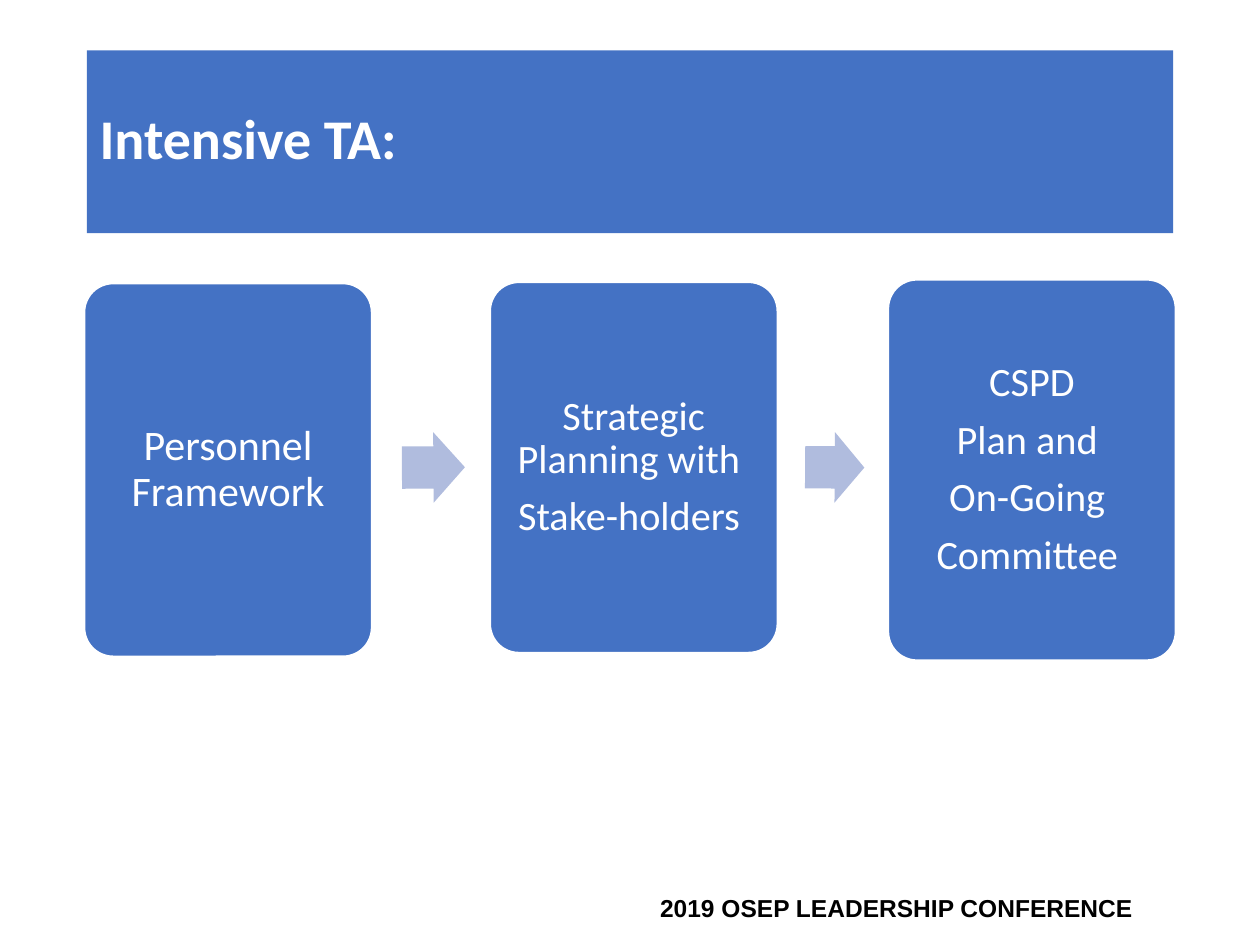
from dataclasses import dataclass

from pptx import Presentation
from pptx.dml.color import RGBColor
from pptx.enum import shapes, text
from pptx.util import Inches, Pt

BLUE = RGBColor(0x44, 0x72, 0xC4)
PALE_BLUE = RGBColor(0xB0, 0xBC, 0xDE)
WHITE = RGBColor(0xFF, 0xFF, 0xFF)
BLACK = RGBColor(0x00, 0x00, 0x00)

STEP_WIDTH = 2.28
ARROW_TOP, ARROW_HEIGHT = 3.43, 0.56


@dataclass
class Step:
    left: float
    top: float
    height: float
    size: int
    lines: list[str]


@dataclass
class Arrow:
    left: float
    width: float
    rotation: float


STEPS = [
    Step(0.67, 2.25, 2.96, 24, ["Personnel Framework"]),
    Step(3.89, 2.24, 2.94, 23, ["Strategic Planning with ", "Stake-holders "]),
    Step(7.05, 2.22, 3.02, 23, ["CSPD", "Plan and ", "On-Going ", "Committee "]),
]
ARROWS = [Arrow(3.19, 0.5, 359.6), Arrow(6.39, 0.47, 0.4)]


def place(sp, left: float, top: float, width: float, height: float) -> None:
    sp.left, sp.top = Inches(left), Inches(top)
    sp.width, sp.height = Inches(width), Inches(height)


def format_text(tf, font: str, size: int, color: RGBColor, bold: bool, align) -> None:
    for p in tf.paragraphs:
        p.alignment = align
        for r in p.runs:
            r.font.name = font
            r.font.size = Pt(size)
            r.font.bold = bold
            r.font.color.rgb = color


def fill_shape(sp, color: RGBColor) -> None:
    sp.fill.solid()
    sp.fill.fore_color.rgb = color


def draw_title(s) -> None:
    sp = s.shapes.title
    place(sp, 0.69, 0.4, 8.62, 1.45)
    fill_shape(sp, BLUE)
    tf = sp.text_frame
    tf.text = "Intensive TA:"
    tf.vertical_anchor = text.MSO_ANCHOR.MIDDLE
    tf.paragraphs[0].line_spacing = 0.9
    format_text(tf, "Calibri", 32, WHITE, True, text.PP_ALIGN.LEFT)


def draw_step(s, step: Step) -> None:
    sp = s.shapes.add_shape(
        shapes.MSO_SHAPE.ROUNDED_RECTANGLE, Inches(step.left), Inches(step.top),
        Inches(STEP_WIDTH), Inches(step.height))
    sp.adjustments[0] = 0.1
    sp.shadow.inherit = False
    fill_shape(sp, BLUE)
    sp.line.color.rgb = WHITE
    sp.line.width = Pt(1)
    tf = sp.text_frame
    tf.word_wrap = True
    tf.vertical_anchor = text.MSO_ANCHOR.MIDDLE
    tf.margin_left = tf.margin_right = Inches(0.1)
    tf.margin_top = tf.margin_bottom = Inches(0.1)
    tf.text = "\n".join(step.lines)
    for p in tf.paragraphs:
        p.line_spacing = 0.9
        p.space_after = Pt(round(step.size * 0.35, 1))
    format_text(tf, "Calibri", step.size, WHITE, False, text.PP_ALIGN.CENTER)


def draw_arrow(s, arrow: Arrow) -> None:
    sp = s.shapes.add_shape(
        shapes.MSO_SHAPE.RIGHT_ARROW, Inches(arrow.left), Inches(ARROW_TOP),
        Inches(arrow.width), Inches(ARROW_HEIGHT))
    sp.adjustments[0] = 0.6
    sp.adjustments[1] = 0.5
    sp.rotation = arrow.rotation
    sp.shadow.inherit = False
    fill_shape(sp, PALE_BLUE)
    sp.line.fill.background()


def draw_footer(s) -> None:
    sp = s.shapes.add_textbox(Inches(3.32), Inches(7.04), Inches(5.77), Inches(0.34))
    tf = sp.text_frame
    tf.word_wrap = True
    tf.text = "2019 OSEP LEADERSHIP CONFERENCE"
    format_text(tf, "Arial", 14, BLACK, True, text.PP_ALIGN.RIGHT)


def main() -> None:
    prs = Presentation()
    prs.slide_width, prs.slide_height = Inches(10), Inches(7.5)
    s = prs.slides.add_slide(prs.slide_layouts[5])
    draw_title(s)
    for step in STEPS:
        draw_step(s, step)
    for arrow in ARROWS:
        draw_arrow(s, arrow)
    draw_footer(s)
    prs.save("out.pptx")


if __name__ == "__main__":
    main()
